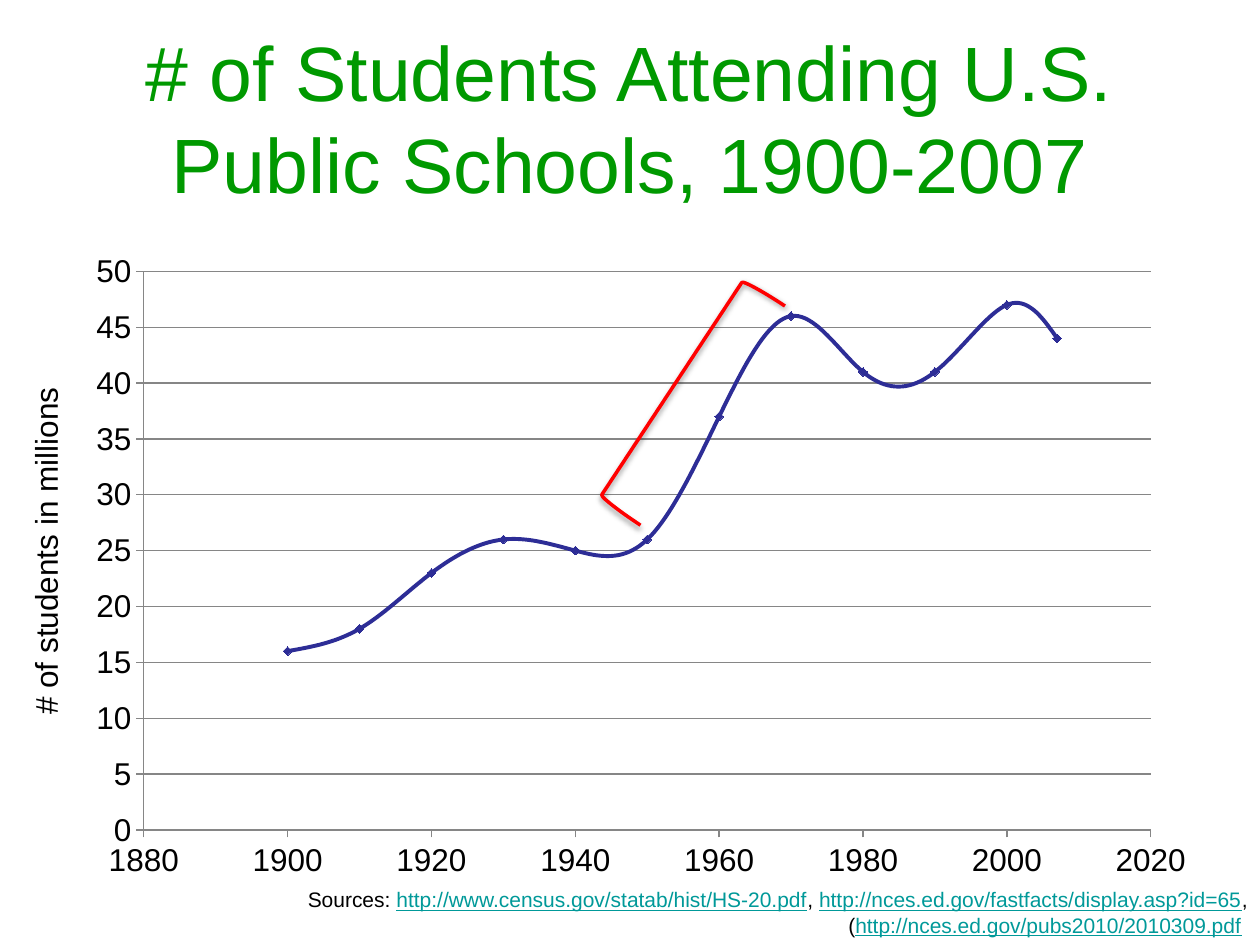
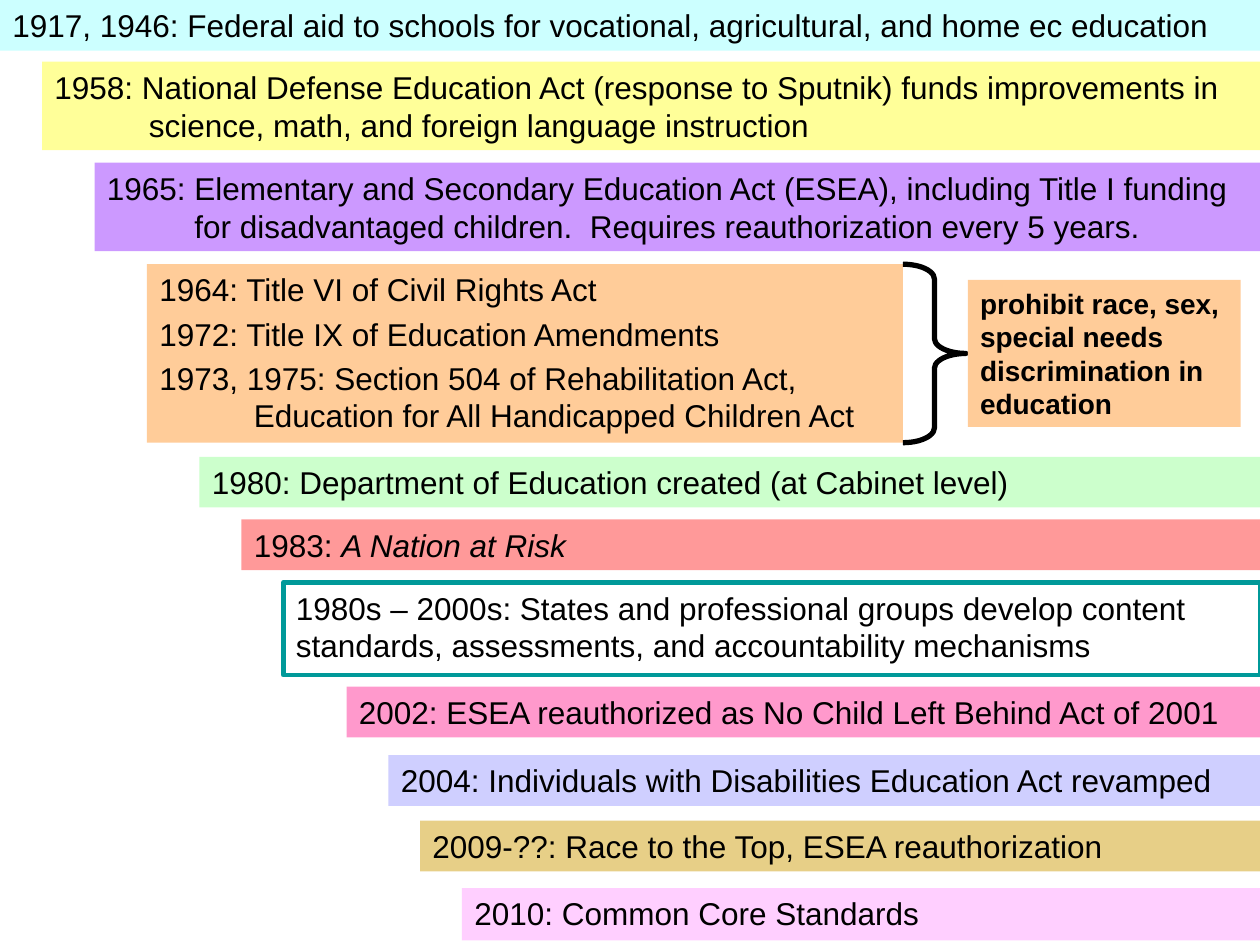
from lxml import etree
from pptx import Presentation
from pptx import util as u
from pptx.chart import data
from pptx.dml import color
from pptx.enum import chart as ch, shapes, text
from pptx.oxml import ns

Pt = u.Pt
SLIDE_W, SLIDE_H = 720, 540
FONT = "Arial"
BLACK, GREEN, TEAL, RED = "000000", "009900", "009999", "FF0000"
NAVY, GREY, PEACH = "2D2D96", "868686", "FFCC99"
BODY = {"size": Pt(18)}
SMALL = {"size": Pt(12)}
LINK = {**SMALL, "color": TEAL, "underline": True}

YEARS = [*range(1900, 2001, 10), 2007]
STUDENTS = [16, 18, 23, 26, 25, 26, 37, 46, 41, 41, 47, 44]

# left, top, height, fill, opacity in percent, hanging indent, text runs
MILESTONES = [
    (0, 0, 29, "CCFFFF", 100, 0,
     [("1917, 1946: Federal aid to schools for vocational, agricultural, "
       "and home ec education", BODY)]),
    (24, 35.3, 50.5, "FFFF99", 100, 54,
     [("1958: National Defense Education Act (response to Sputnik) funds "
       "improvements in science, math, and foreign language instruction", BODY)]),
    (54, 93, 50.5, "CC99FF", 100, 50,
     [("1965: Elementary and Secondary Education Act (ESEA), including Title I "
       "funding for disadvantaged children.  Requires reauthorization every "
       "5 years.", BODY)]),
    (114, 261, 29, "CCFFCC", 100, 0,
     [("1980: Department of Education created (at Cabinet level)", BODY)]),
    (138, 296.8, 29, RED, 40, 0,
     [("1983: ", BODY), ("A Nation at Risk", {**BODY, "italic": True})]),
    (162, 332.8, 53, None, 100, 0,
     [("1980s – 2000s: States and professional groups develop content "
       "standards, assessments, and accountability mechanisms", BODY)]),
    (198, 392.4, 29, "FF99CC", 100, 0,
     [("2002: ESEA reauthorized as No Child Left Behind Act of 2001", BODY)]),
    (222, 431.5, 29, "9999FF", 47, 0,
     [("2004: Individuals with Disabilities Education Act revamped", BODY)]),
    (240, 469, 29, "CC9900", 47, 0,
     [("2009-??: Race to the Top, ESEA reauthorization", BODY)]),
    (264, 507.5, 30, "FF99FF", 47, 0,
     [("2010: Common Core Standards", BODY)]),
]
RIGHTS_LAWS = [
    "1964: Title VI of Civil Rights Act",
    "1972: Title IX of Education Amendments",
    "1973, 1975: Section 504 of Rehabilitation Act, "
    "Education for All Handicapped Children Act",
]


def rgb(value):
    return color.RGBColor.from_string(value)


def points(*lengths):
    return [Pt(n) for n in lengths]


def set_line(line, hex_color, width):
    line.color.rgb = rgb(hex_color)
    line.width = Pt(width)


def write(s, paragraphs, align=text.PP_ALIGN.LEFT, anchor=text.MSO_ANCHOR.TOP,
          hanging=0, before=0):
    """Fill a shape with paragraphs, each a list of (text, font values)."""
    tf = s.text_frame
    tf.word_wrap = True
    tf.vertical_anchor = anchor
    for i, runs in enumerate(paragraphs):
        p = tf.paragraphs[0] if i == 0 else tf.add_paragraph()
        p.alignment = align
        p.space_before = Pt(before if i else 0)
        if hanging:
            pPr = p._p.get_or_add_pPr()
            pPr.set("marL", str(Pt(hanging)))
            pPr.set("indent", str(-Pt(hanging)))
        for words, values in runs:
            r = p.add_run()
            r.text = words
            r.font.name = FONT
            values = {"color": BLACK, **values}
            r.font.color.rgb = rgb(values.pop("color"))
            for name, value in values.items():
                setattr(r.font, name, value)


def add_text(slide, box, paragraphs, **layout):
    s = slide.shapes.add_textbox(*points(*box))
    write(s, paragraphs, **layout)
    return s


def add_shape(slide, kind, box, fill=None, opacity=100, line=None):
    """Add a preset shape; line is (colour, width) or None."""
    s = slide.shapes.add_shape(kind, *points(*box))
    s.shadow.inherit = False
    if fill:
        s.fill.solid()
        s.fill.fore_color.rgb = rgb(fill)
        if opacity < 100:
            clr = s._element.spPr.find(".//" + ns.qn("a:srgbClr"))
            etree.SubElement(clr, ns.qn("a:alpha"), val=str(opacity * 1000))
    else:
        s.fill.background()
    if line:
        set_line(s.line, *line)
    else:
        s.line.fill.background()
    return s


def add_bar(slide, box, paragraphs, fill, opacity=100, line=None, **layout):
    s = add_shape(slide, shapes.MSO_SHAPE.RECTANGLE, box, fill, opacity, line)
    write(s, paragraphs, **layout)


def add_soft_shadow(s):
    effects = s._element.spPr.find(ns.qn("a:effectLst"))
    shadow = etree.SubElement(effects, ns.qn("a:outerShdw"), blurRad=str(Pt(3.1)),
                              dist=str(Pt(1.6)), dir="5400000", rotWithShape="0")
    clr = etree.SubElement(shadow, ns.qn("a:srgbClr"), val=BLACK)
    etree.SubElement(clr, ns.qn("a:alpha"), val="38000")


def set_plot_area(chart, **fractions):
    """Place the inner plot area by fractions x, y, w, h of the chart."""
    area = chart._chartSpace.chart.plotArea
    for old in area.findall(ns.qn("c:layout")):
        area.remove(old)
    layout = etree.Element(ns.qn("c:layout"))
    area.insert(0, layout)
    manual = etree.SubElement(layout, ns.qn("c:manualLayout"))
    values = {"layoutTarget": "inner", "xMode": "edge", "yMode": "edge", **fractions}
    for name, value in values.items():
        etree.SubElement(manual, ns.qn("c:" + name), val=str(value))


def format_axis(axis, low, high, step, grid):
    values = {"minimum_scale": low, "maximum_scale": high, "major_unit": step,
              "has_major_gridlines": grid, "has_minor_gridlines": False,
              "has_title": False, "major_tick_mark": ch.XL_TICK_MARK.OUTSIDE,
              "minor_tick_mark": ch.XL_TICK_MARK.NONE}
    for name, value in values.items():
        setattr(axis, name, value)
    axis.tick_labels.number_format = "0"
    axis.tick_labels.number_format_is_linked = False
    set_line(axis.format.line, GREY, 0.75)
    if grid:
        set_line(axis.major_gridlines.format.line, GREY, 0.75)


def add_enrollment_chart(slide, box):
    cd = data.XyChartData()
    series = cd.add_series("Series 1")
    for year, millions in zip(YEARS, STUDENTS):
        series.add_data_point(year, millions)
    chart = slide.shapes.add_chart(ch.XL_CHART_TYPE.XY_SCATTER_SMOOTH,
                                   *points(*box), cd).chart
    chart.has_title = chart.has_legend = False
    chart.font.name = FONT
    chart.font.size = Pt(18)
    chart.font.color.rgb = rgb(BLACK)
    set_plot_area(chart, x=0.062, y=0.046, w=0.888, h=0.858)
    format_axis(chart.category_axis, 1880, 2020, 20, False)
    format_axis(chart.value_axis, 0, 50, 5, True)

    plot = chart.plots[0]
    plot.vary_by_categories = False
    curve = plot.series[0]
    set_line(curve.format.line, NAVY, 2.25)
    curve.marker.style = ch.XL_MARKER_STYLE.DIAMOND
    curve.marker.size = 5
    curve.marker.format.fill.solid()
    curve.marker.format.fill.fore_color.rgb = rgb(NAVY)
    set_line(curve.marker.format.line, NAVY, 0.75)
    for smooth in curve._element.findall(ns.qn("c:smooth")):
        smooth.set("val", "1")


def build_enrollment(slide):
    center = text.PP_ALIGN.CENTER
    title = "# of Students Attending U.S. Public Schools, 1900-2007"
    add_text(slide, (36, 21.6, 648, 90),
             [[(title, {"size": Pt(44), "color": GREEN})]],
             align=center, anchor=text.MSO_ANCHOR.MIDDLE)
    add_enrollment_chart(slide, (42, 138, 648, 372))

    label = add_text(slide, (11.5, 144, 36, 342),
                     [[("# of students in millions", BODY)]], align=center)
    label.text_frame._txBody.bodyPr.set("vert", "vert270")

    add_text(slide, (0, 503.3, SLIDE_W, 36.7), [[
        ("Sources: ", SMALL),
        ("http://www.census.gov/statab/hist/HS-20.pdf", LINK),
        (", ", SMALL),
        ("http://nces.ed.gov/fastfacts/display.asp?id=65", LINK),
        (", (", SMALL),
        ("http://nces.ed.gov/pubs2010/2010309.pdf", LINK),
        (" ", SMALL),
    ]], align=text.PP_ALIGN.RIGHT)

    bracket = add_shape(slide, shapes.MSO_SHAPE.LEFT_BRACKET,
                        (381.6, 154.8, 28, 150), line=(RED, 2))
    bracket.rotation = 33.4
    add_soft_shadow(bracket)


def build_timeline(slide):
    for left, top, height, fill, opacity, hanging, runs in MILESTONES:
        add_bar(slide, (left, top, SLIDE_W - left, height), [runs], fill, opacity,
                line=None if fill else (TEAL, 2.75), hanging=hanging)

    add_bar(slide, (84, 151, 432, 102), [[(law, BODY)] for law in RIGHTS_LAWS],
            PEACH, hanging=54, before=3.6)
    brace = add_shape(slide, shapes.MSO_SHAPE.RIGHT_BRACE, (516, 151, 36, 102),
                      line=(BLACK, 3))
    brace.adjustments[0] = 0.236
    brace.adjustments[1] = 0.5
    add_bar(slide, (553, 160, 156, 84),
            [[("prohibit race, sex, special needs discrimination in education",
               {"size": Pt(16), "bold": True})]], PEACH)


def main():
    prs = Presentation()
    prs.slide_width, prs.slide_height = points(SLIDE_W, SLIDE_H)
    blank = prs.slide_layouts[6]
    for build in (build_enrollment, build_timeline):
        build(prs.slides.add_slide(blank))
    prs.save("out.pptx")


if __name__ == "__main__":
    main()
